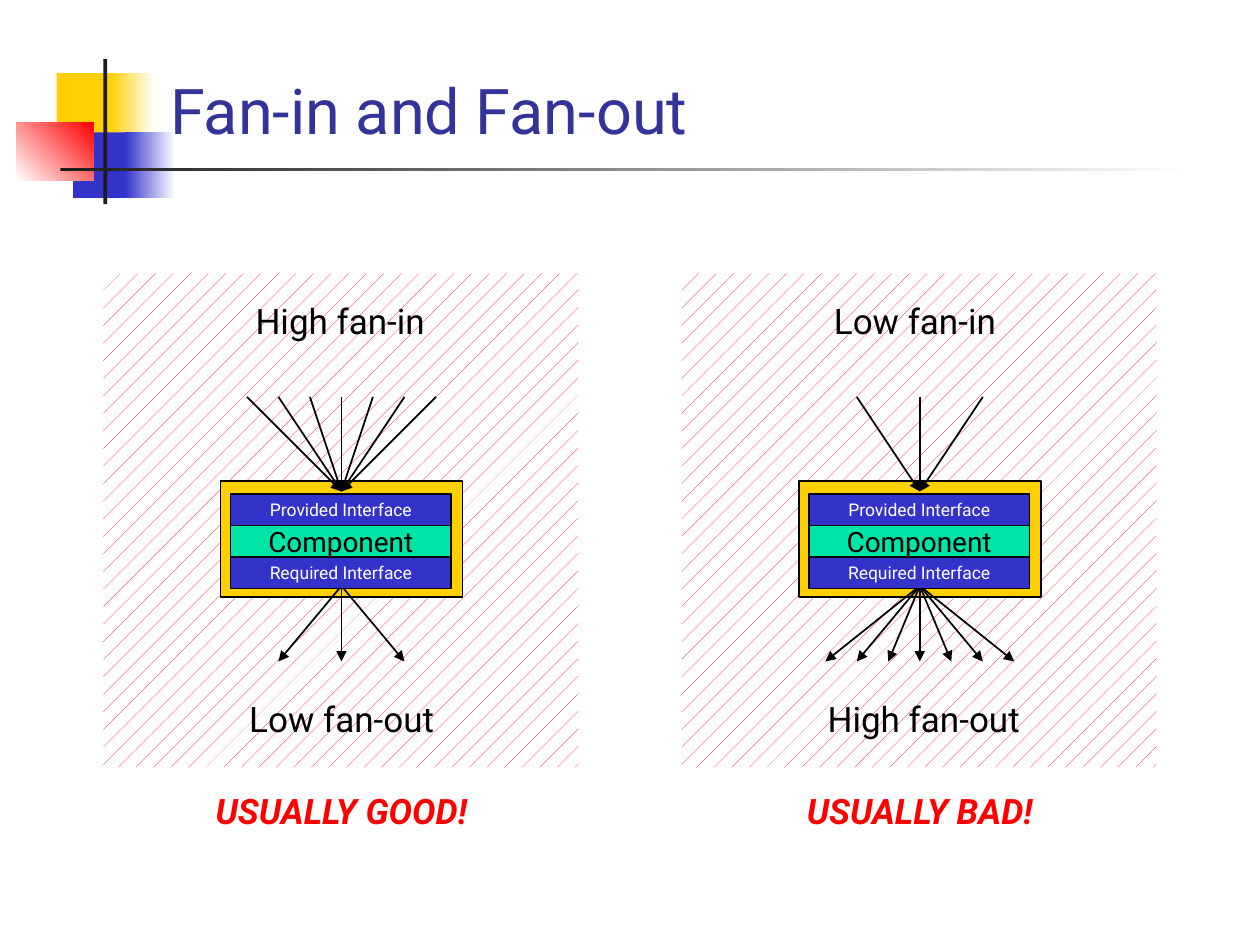
import pptx
import pptx.dml.color
import pptx.enum.dml
import pptx.enum.shapes
import pptx.enum.text
import pptx.oxml
import pptx.oxml.ns
import pptx.util

Inches = pptx.util.Inches
Pt = pptx.util.Pt
RGBColor = pptx.dml.color.RGBColor
RECTANGLE = pptx.enum.shapes.MSO_SHAPE.RECTANGLE
ALIGN = pptx.enum.text.PP_ALIGN
ANCHOR = pptx.enum.text.MSO_ANCHOR

YELLOW = RGBColor(0xFF, 0xCF, 0x01)
BLUE = RGBColor(0x33, 0x33, 0xCC)
TITLE_BLUE = RGBColor(0x33, 0x33, 0x99)
GREEN = RGBColor(0x00, 0xE4, 0xA8)
RED = RGBColor(0xFF, 0x00, 0x00)
CHARCOAL = RGBColor(0x1C, 0x1C, 0x1C)
BLACK = RGBColor(0x00, 0x00, 0x00)
WHITE = RGBColor(0xFF, 0xFF, 0xFF)

MANY = [0.25 * i for i in range(-3, 4)]
FEW = [-0.5, 0, 0.5]


class FanSlide:
    font_name = "Roboto"
    line_width = Pt(1)

    def __init__(self, deck):
        self.slide = deck.slides.add_slide(deck.slide_layouts[5])
        self.shapes = self.slide.shapes

    def set_text(self, frame, text, size, color, align=ALIGN.LEFT, strong=False):
        paragraph = frame.paragraphs[0]
        paragraph.text = text
        paragraph.alignment = align
        font = paragraph.font
        font.name, font.size, font.color.rgb = self.font_name, Pt(size), color
        font.bold = font.italic = strong

    def title(self, text, left, top, width, height):
        heading = self.shapes.title
        heading.left, heading.top = Inches(left), Inches(top)
        heading.width, heading.height = Inches(width), Inches(height)
        heading.text_frame.vertical_anchor = ANCHOR.BOTTOM
        self.set_text(heading.text_frame, text, 36, TITLE_BLUE)

    def label(self, text, left, top, width, **style):
        frame = self.shapes.add_textbox(
            Inches(left), Inches(top), Inches(width), Inches(0.43)).text_frame
        frame.word_wrap = False
        frame.auto_size = pptx.enum.text.MSO_AUTO_SIZE.SHAPE_TO_FIT_TEXT
        self.set_text(frame, text, 20, **style)

    def block(self, left, top, width, height, color=None, outlined=False, parent=None):
        block = (parent or self).shapes.add_shape(
            RECTANGLE, Inches(left), Inches(top), Inches(width), Inches(height))
        block.shadow.inherit = False
        if color is not None:
            block.fill.solid()
            block.fill.fore_color.rgb = color
        if outlined:
            block.line.color.rgb = BLACK
            block.line.width = self.line_width
        else:
            block.line.fill.background()
        return block

    def fade(self, left, top, width, height, start, end, angle=0):
        fill = self.block(left, top, width, height).fill
        fill.gradient()
        fill.gradient_angle = angle
        for stop, color, position in zip(fill.gradient_stops, (start, end), (0, 1)):
            stop.color.rgb = color
            stop.position = position

    def hatched_area(self, left, top, width, height):
        fill = self.block(left, top, width, height).fill
        fill.patterned()
        fill.pattern = pptx.enum.dml.MSO_PATTERN.PERCENT_5
        fill.fore_color.rgb = RED
        fill.back_color.rgb = WHITE

    def arrow(self, x1, y1, x2, y2):
        arrow = self.shapes.add_connector(
            pptx.enum.shapes.MSO_CONNECTOR.STRAIGHT,
            Inches(x1), Inches(y1), Inches(x2), Inches(y2))
        arrow.line.color.rgb = BLACK
        arrow.line.width = self.line_width
        namespace = pptx.oxml.ns.nsdecls("a")
        properties = arrow._element.spPr
        properties.find(pptx.oxml.ns.qn("a:ln")).append(
            pptx.oxml.parse_xml(f'<a:tailEnd {namespace} type="triangle"/>'))
        properties.append(pptx.oxml.parse_xml(f"<a:effectLst {namespace}/>"))

    def component(self, center):
        group = self.shapes.add_group_shape()
        rows = [("Provided Interface", 10, BLUE, WHITE),
                ("Component", 16, GREEN, BLACK),
                ("Required Interface", 10, BLUE, WHITE)]
        for i, (text, size, fill, color) in enumerate(rows):
            row = self.block(center - 0.88, 3.92 + 0.25 * i, 1.75, 0.25,
                             fill, outlined=True, parent=group)
            row.text_frame.word_wrap = False
            row.text_frame.vertical_anchor = ANCHOR.MIDDLE
            self.set_text(row.text_frame, text, size, color, ALIGN.CENTER)

    def panel(self, center, fan_in, fan_out, verdict):
        """Draw one case; each fan is (label, label width, arrow offsets)."""
        self.hatched_area(center - 1.89, 2.17, 3.77, 3.92)
        self.block(center - 0.96, 3.82, 1.92, 0.92, YELLOW, outlined=True)
        in_text, in_width, in_offsets = fan_in
        out_text, out_width, out_offsets = fan_out
        for offset in out_offsets:
            self.arrow(center, 4.65, center + offset, 5.25)
        for offset in in_offsets:
            self.arrow(center + offset, 3.15, center, 3.9)
        self.label(in_text, center - 0.78, 2.33, in_width, color=BLACK)
        self.label(out_text, center - 0.83, 5.49, out_width, color=BLACK)
        verdict_text, verdict_width = verdict
        self.label(verdict_text, center - verdict_width / 2, 6.22, verdict_width,
                   color=RED, align=ALIGN.CENTER, strong=True)
        self.component(center)

    def ornament(self):
        self.block(0.45, 0.58, 0.48, 0.52, YELLOW)
        self.fade(0.87, 0.58, 0.36, 0.52, YELLOW, WHITE)
        self.block(0.58, 1.05, 0.46, 0.52, BLUE)
        self.fade(0.99, 1.05, 0.4, 0.52, BLUE, WHITE)
        self.fade(0.13, 0.97, 0.61, 0.46, WHITE, RED, angle=45)
        self.block(0.82, 0.47, 0.03, 1.15, CHARCOAL)
        self.fade(0.48, 1.33, 9, 0.03, CHARCOAL, WHITE)
        # The title reads in front of the ornament.
        tree = self.shapes._spTree
        tree.append(self.shapes.title._element)


def main():
    deck = pptx.Presentation()
    deck.slide_width, deck.slide_height = Inches(10), Inches(7.5)
    fans = FanSlide(deck)
    fans.ornament()
    fans.title("Fan-in and Fan-out", 1.25, 0.39, 8.52, 0.83)
    fans.panel(2.71, ("High fan-in", 1.56, MANY), ("Low fan-out", 1.67, FEW),
               ("USUALLY GOOD!", 2.5))
    fans.panel(7.3, ("Low fan-in", 1.49, FEW), ("High fan-out", 1.74, MANY),
               ("USUALLY BAD!", 2.25))
    deck.save("out.pptx")


if __name__ == "__main__":
    main()
